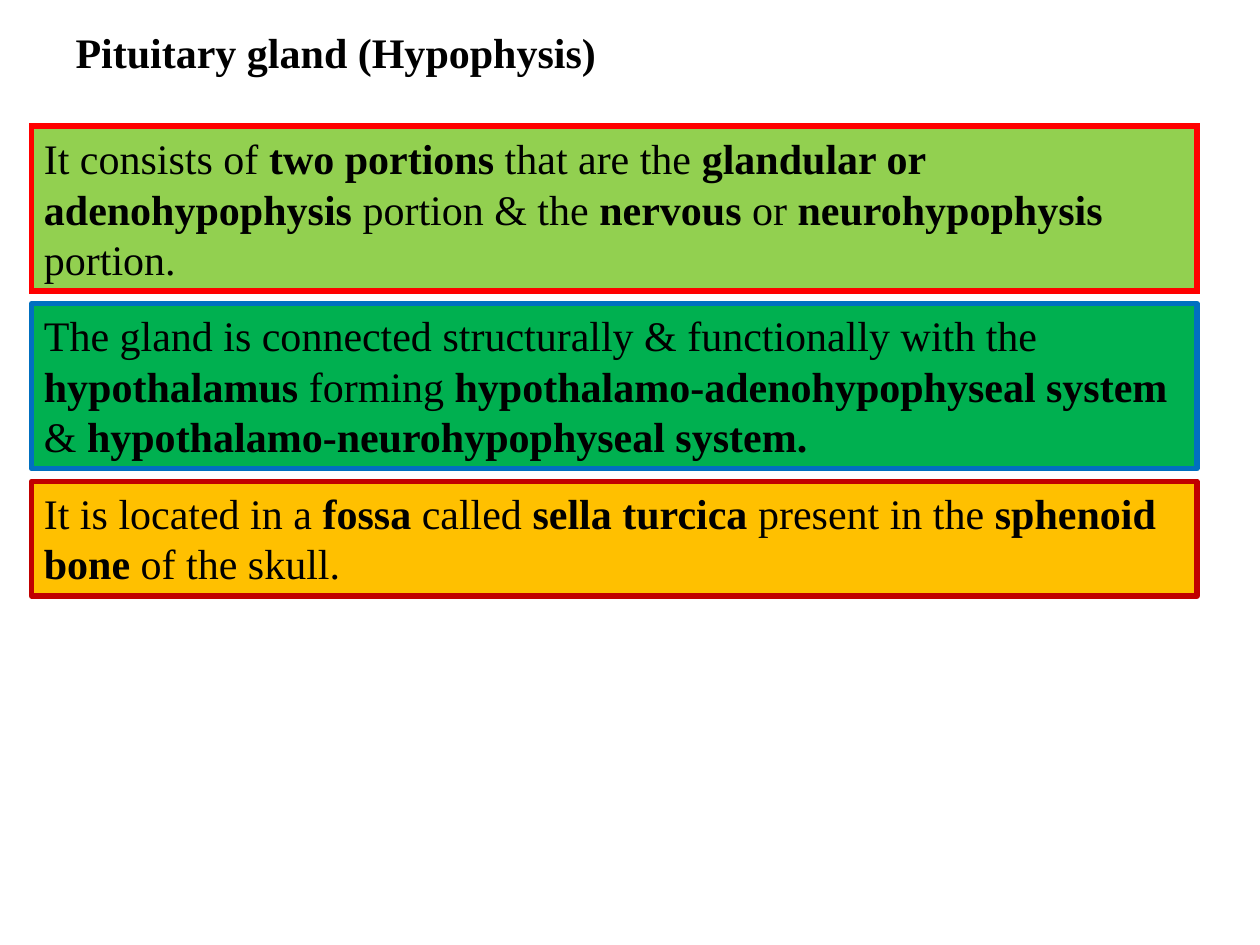
from lxml.etree import SubElement
from pptx import Presentation
from pptx.dml.color import RGBColor
from pptx.enum.shapes import MSO_SHAPE
from pptx.enum.text import MSO_ANCHOR, MSO_AUTO_SIZE, PP_ALIGN
from pptx.oxml.ns import qn
from pptx.util import Inches, Pt

BLACK = RGBColor(0x00, 0x00, 0x00)
RED = RGBColor(0xFF, 0x00, 0x00)
LIGHT_GREEN = RGBColor(0x92, 0xD0, 0x50)
BLUE = RGBColor(0x00, 0x70, 0xC0)
GREEN = RGBColor(0x00, 0xB0, 0x50)
DARK_RED = RGBColor(0xC0, 0x00, 0x00)
AMBER = RGBColor(0xFF, 0xC0, 0x00)

FONT = "Times New Roman"
PANEL_LEFT, PANEL_TOP, PANEL_WIDTH, PANEL_GAP = 0.25, 1, 9.25, 0.1

PORTIONS = [
    ("It consists of ", False), ("two portions ", True),
    ("that are the ", False), ("glandular or adenohypophysis", True),
    (" portion & the ", False), ("nervous", True), (" or ", False),
    ("neurohypophysis", True), (" portion.", False),
]
CONNECTIONS = [
    ("The gland is connected structurally & functionally with the ", False),
    ("hypothalamus", True), (" forming ", False),
    ("hypothalamo-adenohypophyseal system", True), (" & ", False),
    ("hypothalamo-neurohypophyseal system.", True),
]
LOCATION = [
    ("It is located in a ", False), ("fossa", True), (" called ", False),
    ("sella turcica ", True), ("present in the ", False),
    ("sphenoid bone", True), (" of the skull.", False),
]
PANELS = [
    (PORTIONS, 1.31, LIGHT_GREEN, RED, True),
    (CONNECTIONS, 1.31, GREEN, BLUE, False),
    (LOCATION, 0.91, AMBER, DARK_RED, False),
]


def write_text(shape, runs, anchor):
    frame = shape.text_frame
    frame.word_wrap = True
    frame.auto_size = MSO_AUTO_SIZE.SHAPE_TO_FIT_TEXT
    frame.vertical_anchor = anchor
    paragraph = frame.paragraphs[0]
    paragraph.alignment = PP_ALIGN.LEFT
    for text, bold in runs:
        run = paragraph.add_run()
        run.text = text
        run.font.name = FONT
        run.font.size = Pt(24)
        run.font.bold = bold
        run.font.color.rgb = BLACK


def add_title(slide):
    title = slide.shapes.title
    title.left, title.top = Inches(0.5), Inches(0.16)
    title.width, title.height = Inches(4.5), Inches(0.5)
    write_text(title, [("Pituitary gland (Hypophysis)", True)], MSO_ANCHOR.MIDDLE)


def add_panel(slide, top, height, runs, fill, outline, sharp_corners):
    panel = slide.shapes.add_shape(
        MSO_SHAPE.RECTANGLE, Inches(PANEL_LEFT), Inches(top),
        Inches(PANEL_WIDTH), Inches(height),
    )
    panel.shadow.inherit = False
    panel.fill.solid()
    panel.fill.fore_color.rgb = fill
    panel.line.color.rgb = outline
    panel.line.width = Pt(3)
    if sharp_corners:
        line = panel.element.spPr.find(qn("a:ln"))
        SubElement(line, qn("a:miter"), lim="800000")
    write_text(panel, runs, MSO_ANCHOR.MIDDLE if sharp_corners else MSO_ANCHOR.TOP)


def main():
    presentation = Presentation()
    presentation.slide_width = Inches(10)
    presentation.slide_height = Inches(7.5)
    slide = presentation.slides.add_slide(presentation.slide_layouts[5])
    add_title(slide)
    top = PANEL_TOP
    for runs, height, fill, outline, sharp_corners in PANELS:
        add_panel(slide, top, height, runs, fill, outline, sharp_corners)
        top += height + PANEL_GAP
    presentation.save("out.pptx")


if __name__ == "__main__":
    main()
